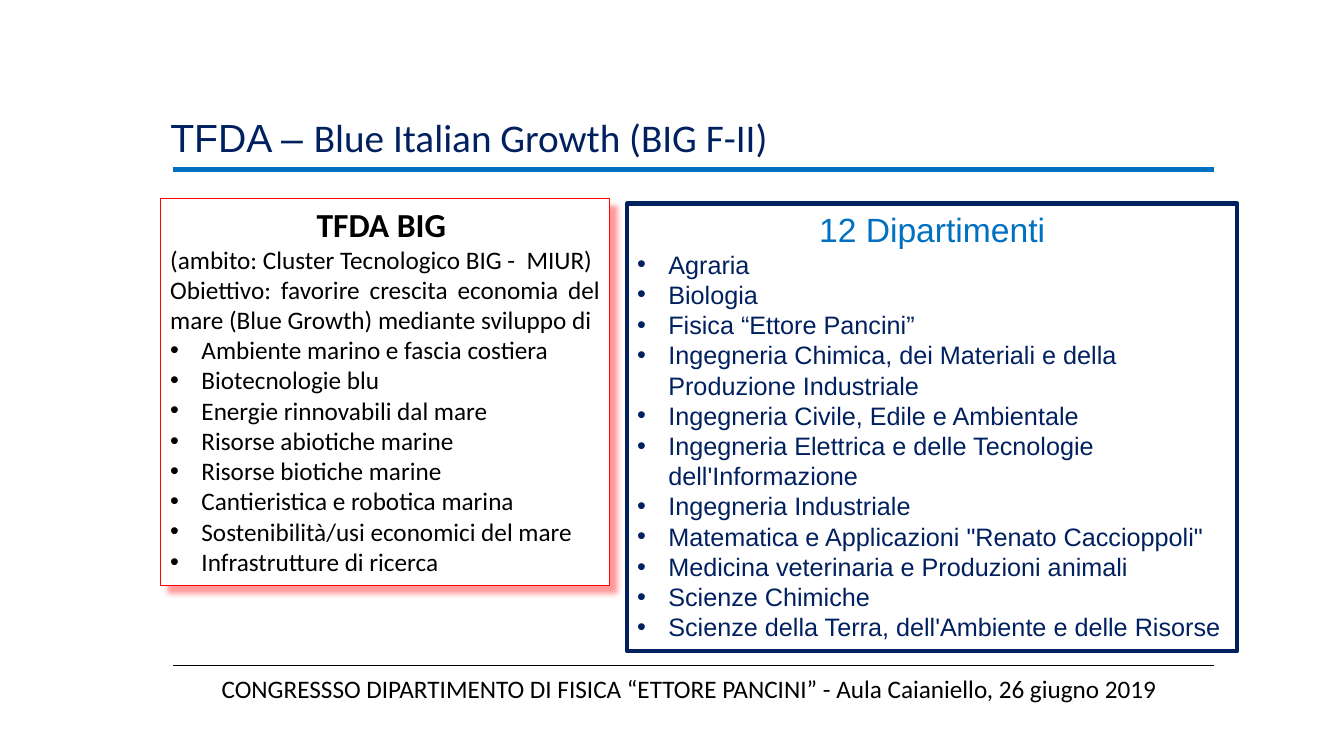
from lxml.etree import SubElement
from pptx import Presentation
from pptx.dml.color import RGBColor
from pptx.enum.shapes import MSO_CONNECTOR, MSO_SHAPE
from pptx.enum.text import MSO_ANCHOR, MSO_AUTO_SIZE, PP_ALIGN
from pptx.oxml.ns import qn
from pptx.util import Pt

PX = 9144  # 100 px to the inch
BLACK = RGBColor(0x00, 0x00, 0x00)
WHITE = RGBColor(0xFF, 0xFF, 0xFF)
RED = RGBColor(0xFF, 0x00, 0x00)
NAVY = RGBColor(0x00, 0x20, 0x60)
BLUE = RGBColor(0x00, 0x70, 0xC0)
INDENT = 31

THEMES = [
    "Ambiente marino e fascia costiera",
    "Biotecnologie blu",
    "Energie rinnovabili dal mare",
    "Risorse abiotiche marine",
    "Risorse biotiche marine",
    "Cantieristica e robotica marina",
    "Sostenibilità/usi economici del mare",
    "Infrastrutture di ricerca",
]
DEPTS = [
    "Agraria",
    "Biologia",
    "Fisica “Ettore Pancini”",
    "Ingegneria Chimica, dei Materiali e della Produzione Industriale",
    "Ingegneria Civile, Edile e Ambientale",
    "Ingegneria Elettrica e delle Tecnologie dell'Informazione",
    "Ingegneria Industriale",
    "Matematica e Applicazioni \"Renato Caccioppoli\"",
    "Medicina veterinaria e Produzioni animali",
    "Scienze Chimiche",
    "Scienze della Terra, dell'Ambiente e delle Risorse",
]


def px(*sizes):
    return [size * PX for size in sizes]


def write(para, text, font="Calibri", size=18, color=BLACK, bold=False,
          align=PP_ALIGN.LEFT, bullet=False):
    para.alignment = align
    run = para.add_run()
    run.text = text
    run.font.name = font
    run.font.size = Pt(size)
    run.font.bold = bold
    run.font.color.rgb = color
    if bullet:
        props = para._p.get_or_add_pPr()
        props.set("marL", str(INDENT * PX))
        props.set("indent", str(-INDENT * PX))
        SubElement(props, qn("a:buFont"), typeface="Arial")
        SubElement(props, qn("a:buChar"), char="•")


def add_rule(shapes, y, color, width):
    rule = shapes.add_connector(MSO_CONNECTOR.STRAIGHT, *px(172, y, 1204, y))
    rule.line.color.rgb = color
    rule.line.width = Pt(width)
    SubElement(rule._element.spPr, qn("a:effectLst"))


def add_label(shapes, box):
    frame = shapes.add_textbox(*px(*box)).text_frame
    frame.word_wrap = False
    frame.auto_size = MSO_AUTO_SIZE.NONE
    return frame.paragraphs[0]


def add_panel(shapes, box, color, width, fill=None):
    panel = shapes.add_shape(MSO_SHAPE.RECTANGLE, *px(*box))
    panel.shadow.inherit = False
    if fill is None:
        panel.fill.background()
    else:
        panel.fill.solid()
        panel.fill.fore_color.rgb = fill
    panel.line.color.rgb = color
    panel.line.width = Pt(width)
    panel.text_frame.word_wrap = True
    panel.text_frame.vertical_anchor = MSO_ANCHOR.TOP
    return panel


def add_shade(panel, color):
    effects = panel._element.spPr.find(qn("a:effectLst"))
    shade = SubElement(effects, qn("a:outerShdw"), blurRad=str(Pt(4)),
                       dist=str(Pt(7)), dir="2700000", algn="tl",
                       rotWithShape="0")
    tint = SubElement(shade, qn("a:srgbClr"), val=str(color))
    SubElement(tint, qn("a:alpha"), val="40000")


def main():
    deck = Presentation()
    deck.slide_width, deck.slide_height = px(1333, 750)
    shapes = deck.slides.add_slide(deck.slide_layouts[6]).shapes

    # Title and footer with their rules
    frame = shapes.add_group_shape().shapes
    add_rule(frame, 660, BLACK, 0.5)
    write(add_label(frame, (210, 663, 957, 40)),
          "CONGRESSSO DIPARTIMENTO DI FISICA “ETTORE PANCINI” - "
          "Aula Caianiello, 26 giugno 2019")
    title = add_label(frame, (159, 108, 619, 104))
    write(title, "TFDA – ", font="Arial", size=28, color=NAVY)
    write(title, "Blue Italian Growth (BIG F-II)", size=28, color=NAVY)
    add_rule(frame, 168, BLUE, 4)

    # Goals panel
    goals = add_panel(shapes, (159, 197, 446, 384), RED, 0.75, fill=WHITE)
    add_shade(goals, RED)
    body = goals.text_frame
    write(body.paragraphs[0], "TFDA BIG ", size=24, bold=True,
          align=PP_ALIGN.CENTER)
    for text in ("(ambito: Cluster Tecnologico BIG -  MIUR)",
                 "Obiettivo: favorire crescita economia del mare "
                 "(Blue Growth) mediante sviluppo di"):
        write(body.add_paragraph(), text, align=PP_ALIGN.JUSTIFY)
    for theme in THEMES:
        write(body.add_paragraph(), theme, align=PP_ALIGN.JUSTIFY, bullet=True)

    # Departments panel
    body = add_panel(shapes, (622, 202, 605, 444), NAVY, 3).text_frame
    write(body.paragraphs[0], "12 Dipartimenti", font="Arial", size=24,
          color=BLUE, align=PP_ALIGN.CENTER)
    for dept in DEPTS:
        write(body.add_paragraph(), dept, font="Arial", color=NAVY,
              bullet=True)

    deck.save("out.pptx")


if __name__ == "__main__":
    main()
